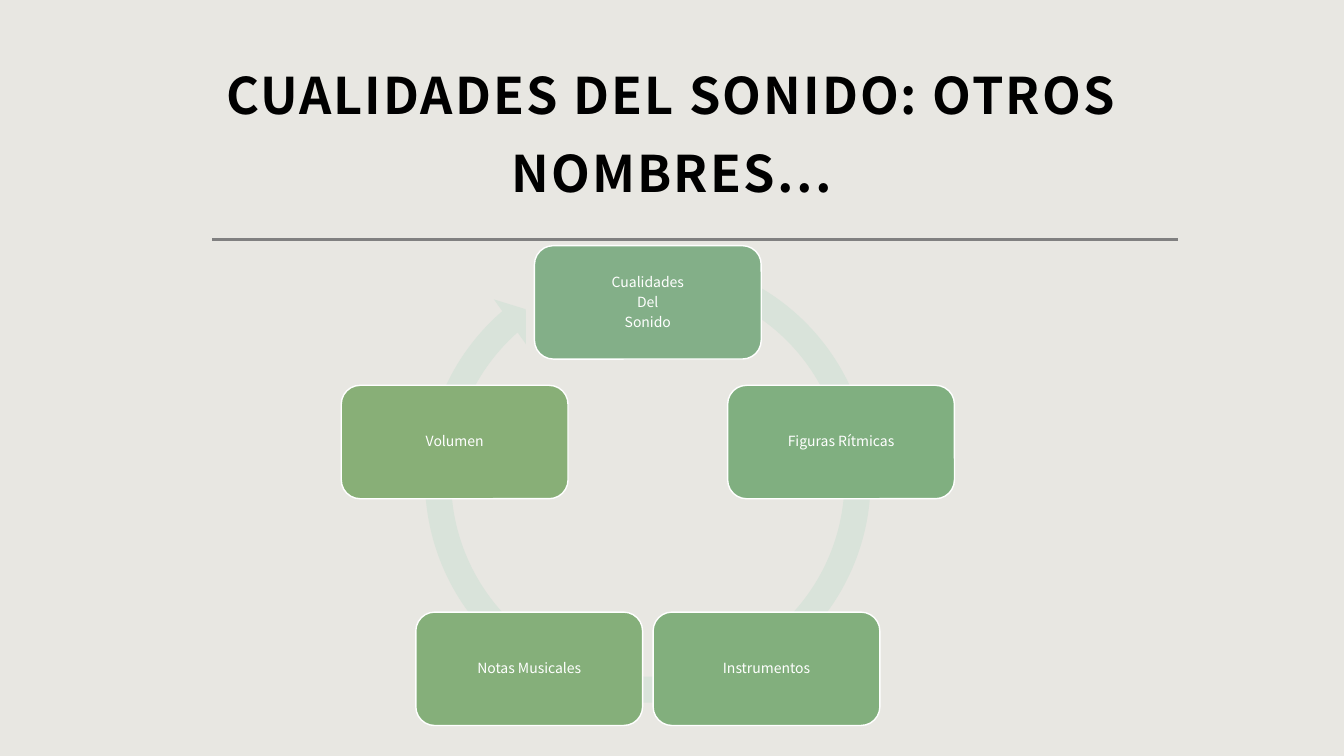
from dataclasses import dataclass
from math import cos, radians, sin

from lxml.etree import SubElement
from pptx import Presentation
from pptx.dml.color import RGBColor
from pptx.enum.shapes import MSO_CONNECTOR, MSO_SHAPE
from pptx.enum.text import MSO_ANCHOR, MSO_AUTO_SIZE, PP_ALIGN
from pptx.oxml.ns import qn
from pptx.slide import Slide
from pptx.text.text import TextFrame
from pptx.util import Emu, Pt

FONT = "Noto Sans CJK JP"
BACKGROUND = RGBColor(0xE8, 0xE7, 0xE2)
RULE_GREY = RGBColor(0x80, 0x80, 0x80)
RING_GREEN = RGBColor(0xD9, 0xE3, 0xDA)
BLACK = RGBColor(0x00, 0x00, 0x00)
WHITE = RGBColor(0xFF, 0xFF, 0xFF)

# Cycle geometry in px (96 per inch)
CENTRE_X, CENTRE_Y, RADIUS = 617, 481, 193
CARD_W, CARD_H = 216, 108
RING_TOP, RING_SIZE = 231, 452
RING_ADJUSTMENTS = (0.055, 3.31, 137.34, 174.12, 0.058)


@dataclass(frozen=True)
class Quality:
    label: str
    fill: RGBColor


QUALITIES = (
    Quality("Cualidades\nDel\nSonido", RGBColor(0x83, 0xAF, 0x88)),
    Quality("Figuras Rítmicas", RGBColor(0x80, 0xAF, 0x80)),
    Quality("Instrumentos", RGBColor(0x82, 0xAF, 0x7D)),
    Quality("Notas Musicales", RGBColor(0x85, 0xAF, 0x7A)),
    Quality("Volumen", RGBColor(0x88, 0xAF, 0x77)),
)


def px(length: float) -> Emu:
    return Emu(round(length) * 9525)


def write(frame: TextFrame, text: str, size: float, colour: RGBColor,
          line_pt: float, after_pt: float = 0, bold: bool = False,
          tracking: int = 0) -> None:
    frame.text = text
    frame.word_wrap = True
    frame.auto_size = MSO_AUTO_SIZE.NONE
    frame.vertical_anchor = MSO_ANCHOR.MIDDLE
    for paragraph in frame.paragraphs:
        paragraph.alignment = PP_ALIGN.CENTER
        paragraph.line_spacing = Pt(line_pt)
        paragraph.space_before = Pt(0)
        paragraph.space_after = Pt(after_pt)
        for run in paragraph.runs:
            run.font.name = FONT
            run.font.size = Pt(size)
            run.font.bold = bold
            run.font.color.rgb = colour
            if tracking:
                run._r.get_or_add_rPr().set("spc", str(tracking))


def add_rule(slide: Slide) -> None:
    rule = slide.shapes.add_connector(
        MSO_CONNECTOR.STRAIGHT, px(202), px(228), px(1122), px(228))
    rule.line.color.rgb = RULE_GREY
    rule.line.width = Pt(2)
    SubElement(rule._element.spPr, qn("a:effectLst"))


def add_ring(slide: Slide) -> None:
    ring = slide.shapes.add_shape(
        MSO_SHAPE.CIRCULAR_ARROW, px(CENTRE_X - RING_SIZE / 2), px(RING_TOP),
        px(RING_SIZE), px(RING_SIZE))
    for index, value in enumerate(RING_ADJUSTMENTS):
        ring.adjustments[index] = value
    ring.shadow.inherit = False
    ring.fill.solid()
    ring.fill.fore_color.rgb = RING_GREEN
    ring.line.fill.background()


def add_card(slide: Slide, quality: Quality, angle: float) -> None:
    left = CENTRE_X + RADIUS * sin(angle) - CARD_W / 2
    top = CENTRE_Y - RADIUS * cos(angle) - CARD_H / 2
    card = slide.shapes.add_shape(
        MSO_SHAPE.ROUNDED_RECTANGLE, px(left), px(top), px(CARD_W), px(CARD_H))
    card.shadow.inherit = False
    card.fill.solid()
    card.fill.fore_color.rgb = quality.fill
    card.line.color.rgb = WHITE
    card.line.width = Pt(1)
    frame = card.text_frame
    frame.margin_left = frame.margin_right = px(4)
    frame.margin_top = frame.margin_bottom = px(4)
    write(frame, quality.label, 10, WHITE, line_pt=10.8, after_pt=3.5)


def main() -> None:
    presentation = Presentation()
    presentation.slide_width, presentation.slide_height = px(1280), px(720)
    slide = presentation.slides.add_slide(presentation.slide_layouts[5])
    slide.background.fill.solid()
    slide.background.fill.fore_color.rgb = BACKGROUND

    # Title and the rule below it
    title = slide.shapes.title
    title.left, title.top = px(88), px(59)
    title.width, title.height = px(1104), px(119)
    write(title.text_frame, "CUALIDADES DEL SONIDO: OTROS NOMBRES…", 36,
          BLACK, line_pt=56, bold=True, tracking=150)
    add_rule(slide)

    # Cycle: cards at equal angles, clockwise from the top
    add_ring(slide)
    for index, quality in enumerate(QUALITIES):
        add_card(slide, quality, radians(360 / len(QUALITIES) * index))

    presentation.save("out.pptx")


if __name__ == "__main__":
    main()
